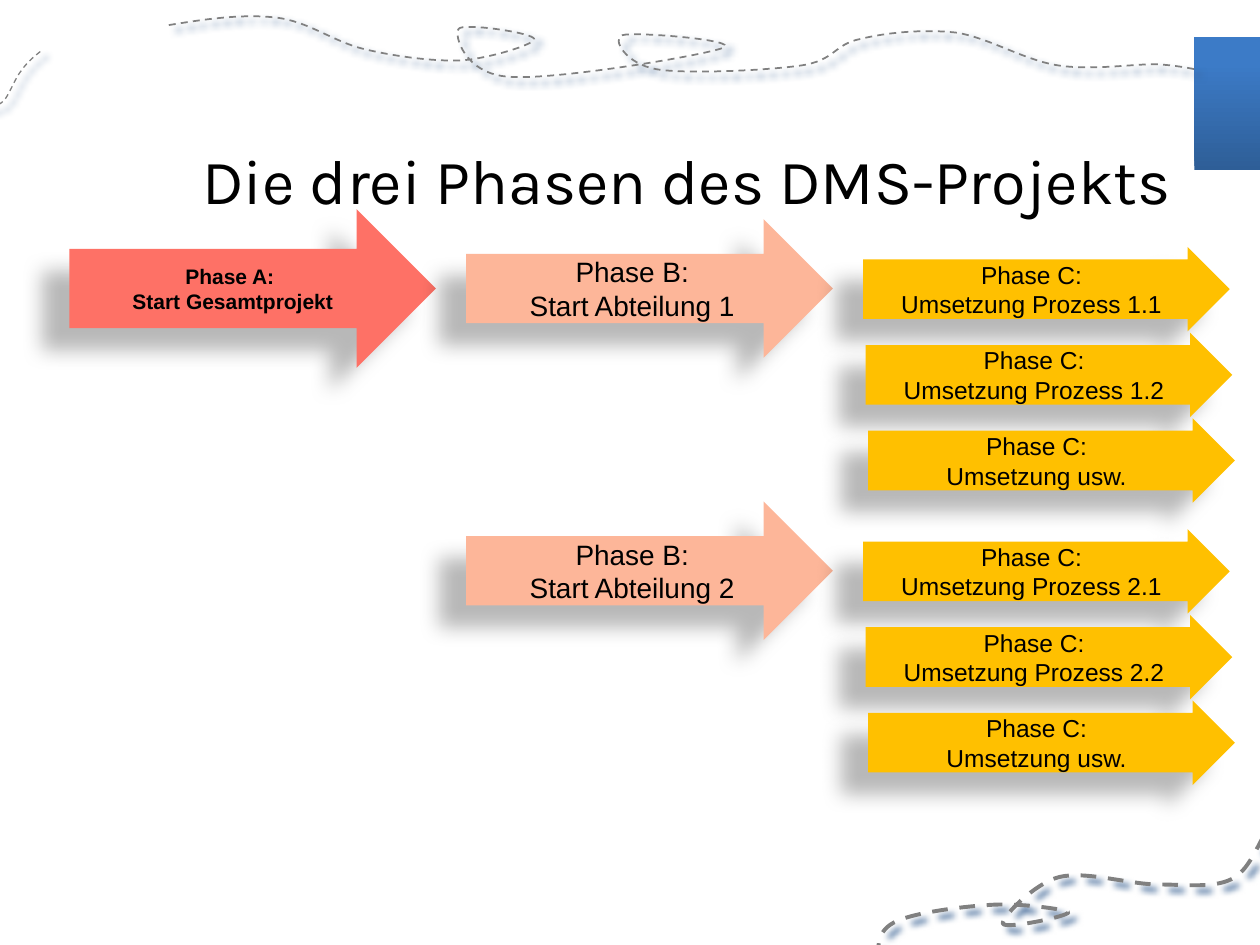
from lxml import etree
from pptx import Presentation
from pptx.dml.color import RGBColor
from pptx.enum.dml import MSO_LINE
from pptx.enum.shapes import MSO_SHAPE
from pptx.enum.text import MSO_ANCHOR, PP_ALIGN
from pptx.oxml.ns import qn
from pptx.util import Inches, Pt

RECTANGLE = MSO_SHAPE.RECTANGLE
RIGHT_ARROW = MSO_SHAPE.RIGHT_ARROW
DASH = MSO_LINE.DASH
MIDDLE = MSO_ANCHOR.MIDDLE
CENTER = PP_ALIGN.CENTER

BLACK = RGBColor(0x00, 0x00, 0x00)
GRAY = RGBColor(0x80, 0x80, 0x80)
SHADOW_BLUE = RGBColor(0x37, 0x60, 0x92)
DARK_BLUE = RGBColor(0x2E, 0x5E, 0x97)
BLUE = RGBColor(0x3C, 0x7B, 0xC7)
RED = RGBColor(0xFE, 0x71, 0x66)
SALMON = RGBColor(0xFD, 0xB6, 0x99)
YELLOW = RGBColor(0xFF, 0xC0, 0x00)

ARROW_WIDTH = 2.91
DEPARTMENT_PITCH = 2.24
PROCESS_PITCH = 0.68
PROCESS_SHIFT = 0.02

TOP_CURVE = [
    (1.34, 0.2), (1.64, 0.15), (1.93, 0.11), (2.19, 0.14),
    (2.45, 0.17), (2.64, 0.33), (2.89, 0.39), (3.14, 0.45), (3.45, 0.49), (3.67, 0.48),
    (3.9, 0.46), (4.25, 0.35), (4.24, 0.31), (4.23, 0.26), (3.67, 0.18), (3.64, 0.23),
    (3.6, 0.28), (3.69, 0.59), (4.04, 0.61), (4.39, 0.64), (5.59, 0.44), (5.74, 0.38),
    (5.89, 0.32), (5.03, 0.25), (4.94, 0.28), (4.85, 0.31), (4.97, 0.51), (5.21, 0.55),
    (5.44, 0.59), (6.09, 0.56), (6.36, 0.52), (6.63, 0.48), (6.62, 0.35), (6.83, 0.31),
    (7.03, 0.26), (7.33, 0.23), (7.59, 0.26), (7.85, 0.3), (8.13, 0.48), (8.4, 0.52),
    (8.66, 0.56), (8.99, 0.51), (9.17, 0.51), (9.35, 0.52), (9.48, 0.55), (9.48, 0.55),
]
BOTTOM_CURVE = [
    (6.97, 7.61), (6.97, 7.5), (6.96, 7.38), (7.12, 7.31),
    (7.27, 7.24), (7.67, 7.19), (7.9, 7.18), (8.12, 7.17), (8.47, 7.22), (8.48, 7.24),
    (8.49, 7.27), (7.97, 7.38), (7.96, 7.33), (7.95, 7.28), (8.21, 7.01), (8.41, 6.96),
    (8.62, 6.91), (8.97, 7.02), (9.19, 7.02), (9.42, 7.02), (9.62, 7.05), (9.77, 6.98),
    (9.91, 6.92), (9.99, 6.69), (10.04, 6.62), (10.09, 6.56), (10.06, 6.6), (10.06, 6.6),
]
LEFT_CURVE = [
    (0.32, 0.41), (0.27, 0.45), (0.22, 0.49), (0.17, 0.56), (0.12, 0.62),
    (0.07, 0.76), (0.03, 0.8), (-0.02, 0.85), (-0.08, 0.85), (-0.08, 0.85),
]


def add_shadow(shape, color, opacity, blur, distance, angle):
    """Give a shape an outer shadow; opacity in percent, lengths in points."""
    shape.shadow.inherit = False
    effects = shape._element.spPr.find(qn("a:effectLst"))
    outer = etree.SubElement(
        effects, qn("a:outerShdw"), blurRad=str(Pt(blur)), dist=str(Pt(distance)),
        dir=str(angle * 60000), algn="ctr", rotWithShape="0")
    tint = etree.SubElement(outer, qn("a:srgbClr"), val=str(color))
    etree.SubElement(tint, qn("a:alpha"), val=str(opacity * 1000))


def add_curve(page, points, width):
    """Draw a dashed Bezier curve through a start point and control triples."""
    builder = page.shapes.build_freeform(
        Inches(points[0][0]), Inches(points[0][1]), scale=1.0)
    builder.add_line_segments(
        [(Inches(x), Inches(y)) for x, y in points[1:]], close=False)
    curve = builder.convert_to_shape()
    path = curve._element.spPr.find(".//" + qn("a:path"))
    lines = path.findall(qn("a:lnTo"))
    for start in range(0, len(lines), 3):
        bezier = etree.SubElement(path, qn("a:cubicBezTo"))
        for line in lines[start:start + 3]:
            bezier.append(line[0])
            path.remove(line)
    curve.fill.background()
    curve.line.color.rgb = GRAY
    curve.line.width = Pt(width)
    curve.line.dash_style = DASH
    add_shadow(curve, SHADOW_BLUE, 100, 4, 5, 40)


def add_gradient_block(page):
    """Add the blue block at the right edge."""
    block = page.shapes.add_shape(
        RECTANGLE, Inches(9.48), Inches(0.29), Inches(0.52), Inches(1.06))
    block.shadow.inherit = False
    block.line.fill.background()
    block.fill.gradient()
    block.fill.gradient_angle = 90
    for stop, color, position in zip(block.fill.gradient_stops, (DARK_BLUE, BLUE), (0, 0.8)):
        stop.color.rgb = color
        stop.position = position


def write_text(shape, text, font, size, bold=False):
    """Write centred black text into a shape."""
    frame = shape.text_frame
    frame.word_wrap = True
    frame.vertical_anchor = MIDDLE
    frame.text = text
    for para in frame.paragraphs:
        para.alignment = CENTER
        para.font.name = font
        para.font.size = Pt(size)
        para.font.bold = bold
        para.font.color.rgb = BLACK


def add_title(page, text):
    """Add the slide title."""
    box = page.shapes.add_textbox(Inches(1.46), Inches(0.99), Inches(7.98), Inches(0.87))
    write_text(box, text, "Karla", 36)
    frame = box.text_frame
    frame.margin_left = frame.margin_right = Inches(0.05)
    frame.margin_top = frame.margin_bottom = Inches(0.05)


def add_arrow(page, left, top, height, color, text, size, bold=False, shaft=0.5):
    """Add a phase arrow with its label and shadow."""
    arrow = page.shapes.add_shape(
        RIGHT_ARROW, Inches(left), Inches(top), Inches(ARROW_WIDTH), Inches(height))
    arrow.adjustments[0] = shaft
    arrow.fill.solid()
    arrow.fill.fore_color.rgb = color
    arrow.line.fill.background()
    add_shadow(arrow, BLACK, 28, 11.8, 19.7, 141)
    write_text(arrow, text, "Arial", size, bold)


def add_department(page, number):
    """Add one department arrow and its three process arrows."""
    offset = (number - 1) * DEPARTMENT_PITCH
    add_arrow(page, 3.7, 1.74 + offset, 1.1, SALMON,
              f"Phase B:\nStart Abteilung {number}", 16)
    processes = (f"Prozess {number}.1", f"Prozess {number}.2", "usw.")
    for row, process in enumerate(processes):
        add_arrow(page, 6.85 + row * PROCESS_SHIFT, 1.96 + offset + row * PROCESS_PITCH,
                  0.67, YELLOW, f"Phase C:\nUmsetzung {process}", 14, shaft=0.706)


def main():
    """Build the slide and save it."""
    deck = Presentation()
    deck.slide_width = Inches(10)
    deck.slide_height = Inches(7.5)
    page = deck.slides.add_slide(deck.slide_layouts[6])
    add_gradient_block(page)
    add_curve(page, TOP_CURVE, 1)
    add_curve(page, BOTTOM_CURVE, 2.25)
    add_curve(page, LEFT_CURVE, 0.75)
    add_title(page, "Die drei Phasen des DMS-Projekts")
    add_arrow(page, 0.55, 1.66, 1.26, RED,
              "Phase A: \vStart Gesamtprojekt", 12, bold=True)
    for number in (1, 2):
        add_department(page, number)
    deck.save("out.pptx")


if __name__ == "__main__":
    main()
